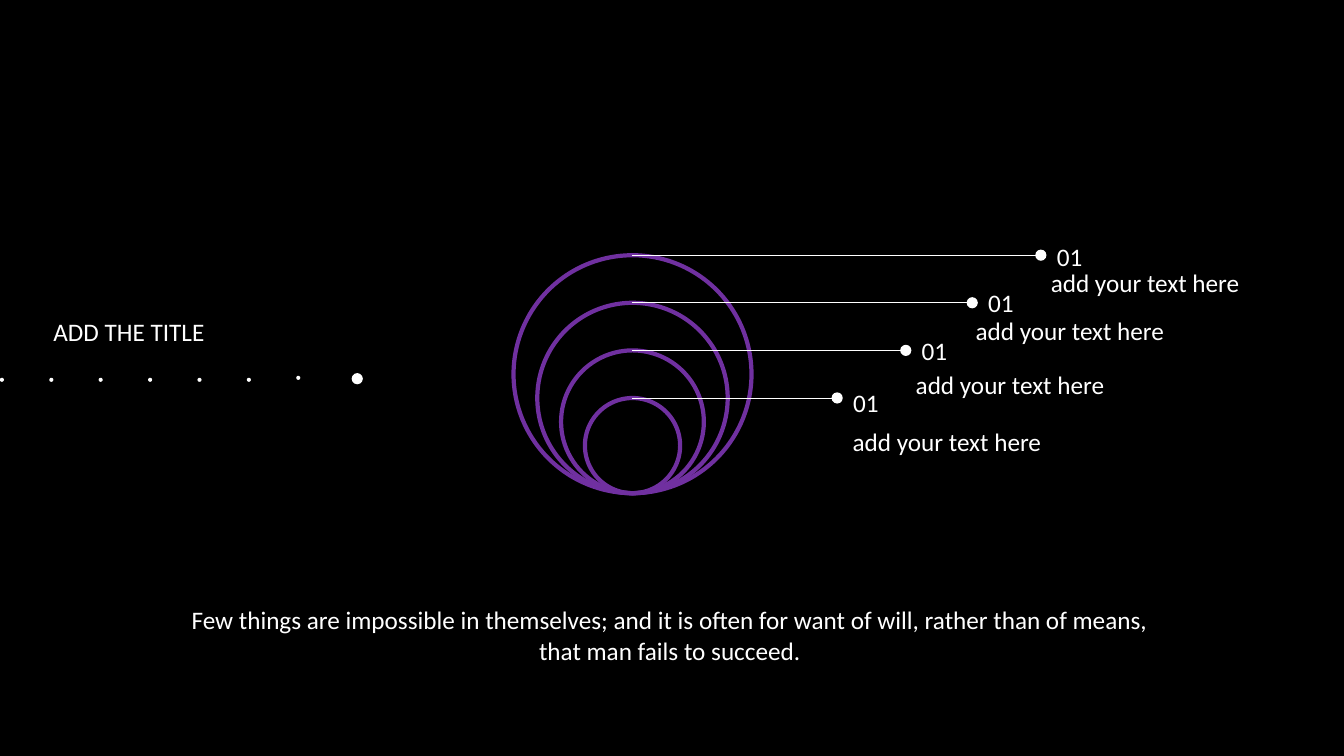
from lxml import etree
from pptx import Presentation
from pptx.dml.color import RGBColor
from pptx.enum import shapes, text
from pptx.oxml.ns import qn
from pptx.util import Pt

BLACK = RGBColor(0x00, 0x00, 0x00)
WHITE = RGBColor(0xFF, 0xFF, 0xFF)
PURPLE = RGBColor(0x70, 0x30, 0xA0)
LINE_HEIGHT = 29
DOT = 8

# Outermost ring first: label x, number drop, caption shift, caption drop
LABELS = [
    (743.5, -13.8, 0, 4.9),
    (694.5, -14.7, -4.7, 5.5),
    (647, -14.1, 0, 10.3),
    (598, -11.4, 4, 16.7),
]


def add_text(slide, left, top, width, height, words, align=text.PP_ALIGN.CENTER):
    sp = slide.shapes.add_textbox(Pt(left), Pt(top), Pt(width), Pt(height))
    tf = sp.text_frame
    tf.word_wrap = True
    p = tf.paragraphs[0]
    p.text = words
    p.alignment = align
    r = p.runs[0]
    r.font.name = "Calibri"
    r.font.size = Pt(18)
    r.font.color.rgb = WHITE


def add_circle(slide, left, top, size):
    sp = slide.shapes.add_shape(
        shapes.MSO_SHAPE.OVAL, Pt(left), Pt(top), Pt(size), Pt(size))
    sp.shadow.inherit = False
    return sp


def add_dot(slide, x, y, size):
    """Place a white dot centred on x, y."""
    sp = add_circle(slide, x - size / 2, y - size / 2, size)
    sp.fill.solid()
    sp.fill.fore_color.rgb = WHITE
    sp.line.fill.background()


def add_ring(slide, left, top, size):
    sp = add_circle(slide, left, top, size)
    sp.fill.background()
    sp.line.color.rgb = PURPLE
    sp.line.width = Pt(3)


def add_leader(slide, x1, x2, y):
    sp = slide.shapes.add_connector(
        shapes.MSO_CONNECTOR.STRAIGHT, Pt(x1), Pt(y), Pt(x2), Pt(y))
    sp.line.color.rgb = WHITE
    sp.line.width = Pt(0.5)
    etree.SubElement(sp._element.spPr, qn("a:effectLst"))


def add_title(slide, left, top, width):
    """Title above a dotted trail that ends in a larger dot."""
    add_text(slide, left + 21.6, top, 141, LINE_HEIGHT, "ADD THE TITLE")
    trail_y = top + 49
    for i in range(7):
        rise = 1.4 if i == 6 else 0
        add_dot(slide, left + 1.4 + 35.28 * i, trail_y - rise, 2.9)
    add_dot(slide, left + width - DOT / 2, trail_y - 0.8, DOT)


def add_rings(slide, left, top, size):
    """Nested rings that share their lowest point, each with a label."""
    center, bottom = left + size / 2, top + size
    step = size / 5
    for i, (x, number_drop, caption_shift, caption_drop) in enumerate(LABELS):
        diameter = size - step * i
        y = bottom - diameter
        add_ring(slide, center - diameter / 2, y, diameter)
        add_leader(slide, center, x, y)
        add_dot(slide, x, y, DOT)
        add_text(slide, x, y + number_drop, 41, LINE_HEIGHT, "01")
        add_text(slide, x + caption_shift, y + caption_drop, 163, LINE_HEIGHT,
                 "add your text here", text.PP_ALIGN.LEFT)


def add_quote(slide, left, top, width, height):
    add_text(slide, left, top, width, height,
             "Few things are impossible in themselves; and it is often for want "
             "of will, rather than of means, that man fails to succeed.")


def main():
    prs = Presentation()
    prs.slide_width, prs.slide_height = Pt(960), Pt(540)
    slide = prs.slides.add_slide(prs.slide_layouts[6])
    slide.background.fill.solid()
    slide.background.fill.fore_color.rgb = BLACK
    add_title(slide, 0, 222.3, 259.2)
    add_rings(slide, 366.8, 182.3, 170)
    add_quote(slide, 128.9, 428.4, 699, 51)
    prs.save("out.pptx")


if __name__ == "__main__":
    main()
